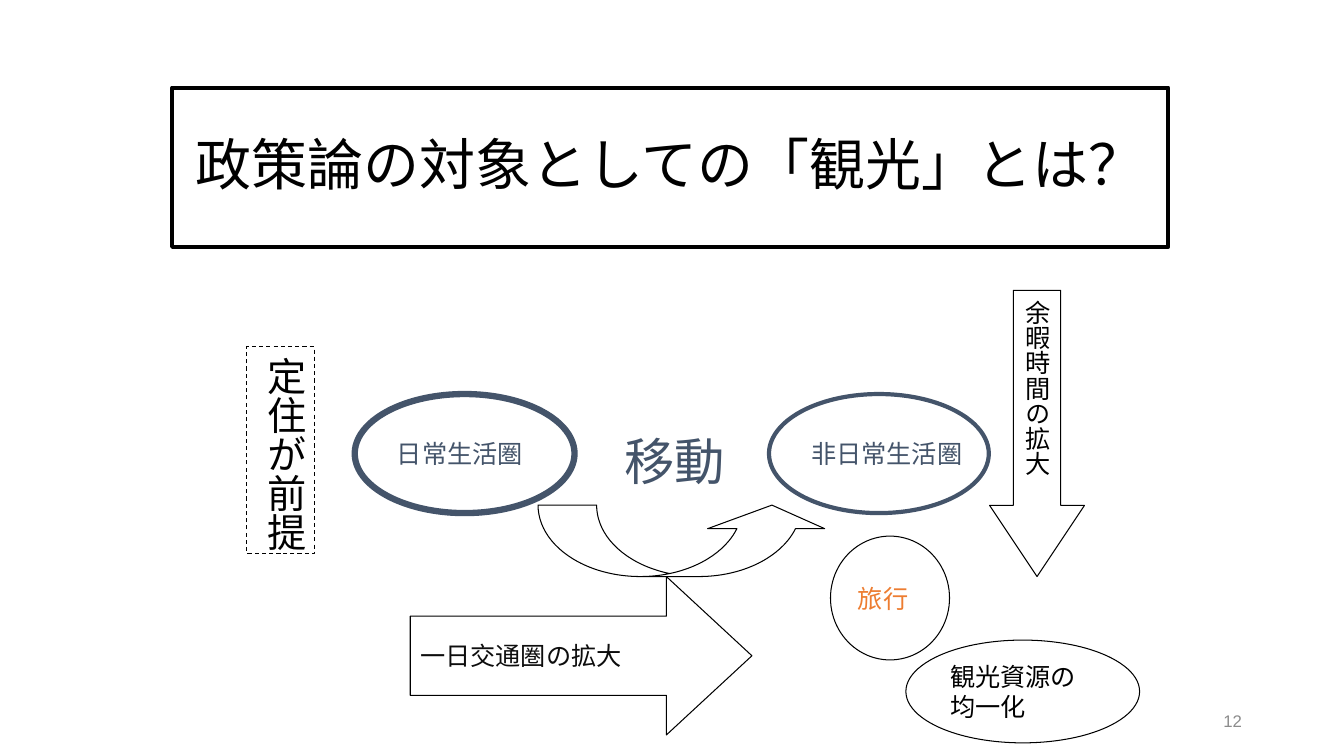
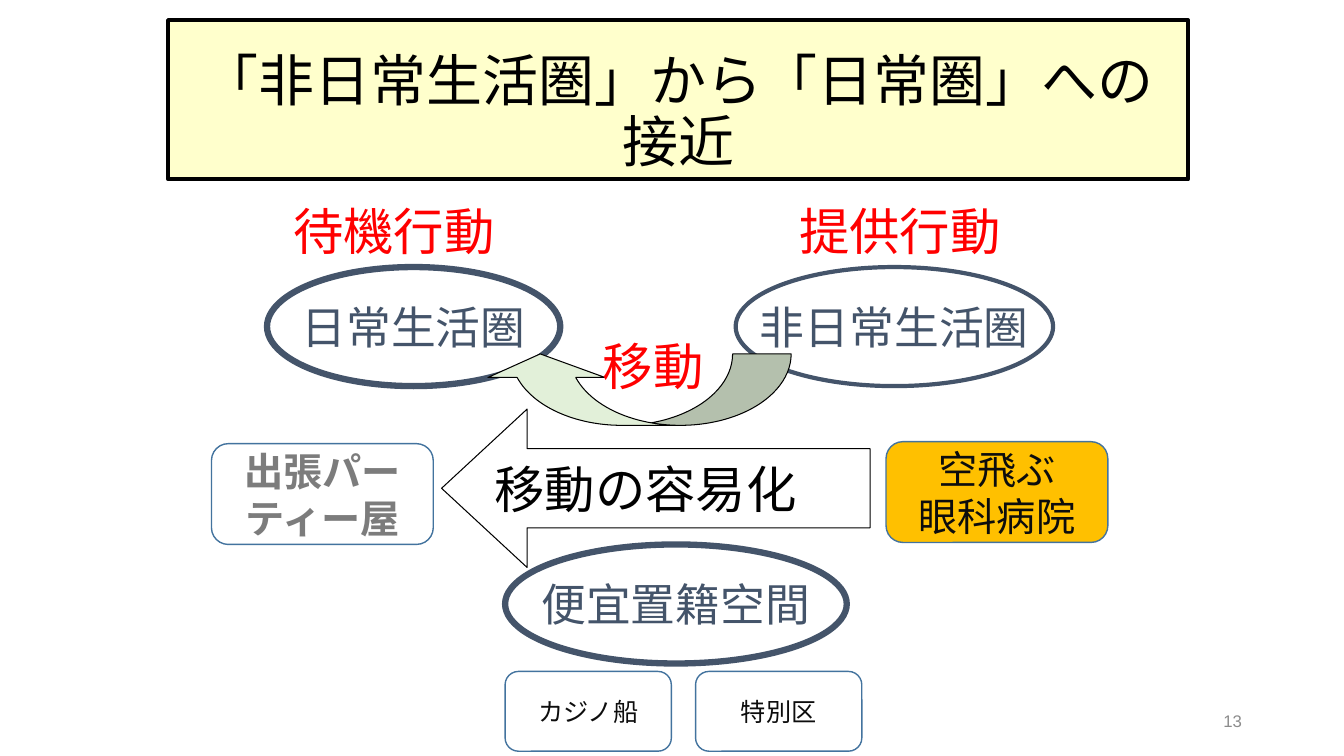
from pptx import Presentation
from pptx.dml.color import RGBColor
from pptx.enum.dml import MSO_LINE_DASH_STYLE as Dash
from pptx.enum.shapes import MSO_AUTO_SHAPE_TYPE as Kind
from pptx.enum.text import MSO_ANCHOR as Anchor, MSO_AUTO_SIZE as AutoSize, PP_ALIGN as Align
from pptx.util import Cm, Pt

# Shared look
BLACK, INK, WHITE = "000000", "0D0D0D", "FFFFFF"
SLATE, RED, ORANGE, GREY = "44546A", "FF0000", "ED7D31", "7C7C7C"
CREAM, GREEN, GOLD, BLUE = "FFFFCC", "E2F0D9", "FFC000", "43739E"
NUMBER_GREY = "8C8C8C"
BODY_FONT, NUMBER_FONT = "Calibri", "Arial"
THIN, MEDIUM, THICK = 0.75, 3, 4.5
SPHERE_HEIGHT = 3
BLOCK_ARROW = (0.5, 0.54)
CURVED_ARROW = (0.82, 1.64, 0.33)


def color(hex_text):
    return RGBColor.from_string(hex_text)


def set_all(target, values):
    for name, value in values.items():
        setattr(target, name, value)


def write(shape, text, size, text_color=BLACK, align=Align.LEFT, anchor=Anchor.MIDDLE,
          wrap=False, grow=False, vertical=False, bold=False, font=BODY_FONT, spacing=None):
    """Fill a shape with text, one paragraph per line."""
    frame = shape.text_frame
    frame.text = text
    set_all(frame, {
        "word_wrap": wrap,
        "vertical_anchor": anchor,
        "auto_size": AutoSize.SHAPE_TO_FIT_TEXT if grow else AutoSize.NONE,
    })
    if vertical:
        shape.element.txBody.bodyPr.set("vert", "eaVert")
    for paragraph in frame.paragraphs:
        set_all(paragraph, {"alignment": align, "line_spacing": spacing})
        set_all(paragraph.runs[0].font, {"name": font, "size": Pt(size), "bold": bold})
        paragraph.runs[0].font.color.rgb = color(text_color)


def add_outline(slide, kind, box, fill=None, line=BLACK, width=THIN, flip="", adjust=()):
    """Draw a preset shape; flip holds any of the letters H and V."""
    shape = slide.shapes.add_shape(kind, *map(Cm, box))
    shape.shadow.inherit = False
    if fill:
        shape.fill.solid()
        shape.fill.fore_color.rgb = color(fill)
    else:
        shape.fill.background()
    shape.line.color.rgb = color(line)
    shape.line.width = Pt(width)
    for index, value in enumerate(adjust):
        shape.adjustments[index] = value
    for axis in flip:
        shape.element.spPr.xfrm.set("flip" + axis, "1")
    return shape


def add_label(slide, box, text, size=36, text_color=RED, **style):
    label = slide.shapes.add_textbox(*map(Cm, box))
    write(label, text, size, text_color, **{"anchor": Anchor.TOP, "grow": True, **style})


def add_title(slide, box, text, fill, anchor):
    title = add_outline(slide, Kind.RECTANGLE, box, fill, width=MEDIUM)
    write(title, text, 40, align=Align.CENTER, anchor=anchor, wrap=True, spacing=0.9)


def add_sphere(slide, left, top, width, text, size, line_width=THICK, align=Align.CENTER):
    """Ellipse for a sphere of life."""
    sphere = add_outline(slide, Kind.OVAL, (left, top, width, SPHERE_HEIGHT),
                         line=SLATE, width=line_width)
    write(sphere, text, size, SLATE, align)


def add_example(slide, box, text, size, text_color=INK, fill=None, bold=False):
    card = add_outline(slide, Kind.ROUNDED_RECTANGLE, box, fill, BLUE, 1)
    write(card, text, size, text_color, Align.CENTER, wrap=True, bold=bold)


def add_slide(presentation, number):
    slide = presentation.slides.add_slide(presentation.slide_layouts[6])
    add_label(slide, (23.93, 17.65, 7.62, 1.02), str(number), 12, NUMBER_GREY, font=NUMBER_FONT,
              align=Align.RIGHT, anchor=Anchor.MIDDLE, wrap=True, grow=False)
    return slide


def build_tourism(presentation):
    slide = add_slide(presentation, 12)
    add_title(slide, (4.34, 2.21, 25.1, 4.01), "政策論の対象としての「観光」とは？",
              WHITE, Anchor.MIDDLE)

    # Movement between the spheres
    add_sphere(slide, 8.94, 9.93, 5.54, "日常生活圏", 18, align=Align.LEFT)
    add_sphere(slide, 19.38, 9.93, 5.54, "非日常生活圏", 18, MEDIUM, Align.LEFT)
    add_outline(slide, Kind.CURVED_DOWN_ARROW, (13.56, 12.73, 7.37, 1.8),
                flip="V", adjust=CURVED_ARROW)
    add_label(slide, (15.49, 10.72, 3.05, 1.78), "移動", text_color=SLATE)

    # Premise
    premise = add_outline(slide, Kind.RECTANGLE, (6.22, 8.74, 1.7, 5.21))
    premise.line.dash_style = Dash.DASH
    write(premise, "定住が前提", 28, anchor=Anchor.TOP, grow=True, vertical=True)

    # Driving forces
    transport = add_outline(slide, Kind.RIGHT_ARROW, (10.34, 14.53, 8.61, 3.99), WHITE,
                            adjust=BLOCK_ARROW)
    write(transport, "一日交通圏の拡大", 18, INK)
    travel = add_outline(slide, Kind.OVAL, (20.93, 13.51, 3, 3.12), WHITE)
    write(travel, "旅行", 18, ORANGE)
    leisure = add_outline(slide, Kind.DOWN_ARROW, (24.94, 7.32, 2.39, 7.21),
                          adjust=(0.5, 0.75))
    write(leisure, "余暇時間の拡大", 18, vertical=True)
    resources = add_outline(slide, Kind.OVAL, (22.83, 16.13, 5.89, 2.59), WHITE)
    write(resources, "観光資源の\n均一化", 18)


def build_approach(presentation):
    slide = add_slide(presentation, 13)
    add_title(slide, (4.24, 0.51, 25.7, 4.01), "「非日常生活圏」から「日常圏」への接近",
              CREAM, Anchor.BOTTOM)

    # Movement between the spheres
    add_sphere(slide, 6.73, 6.73, 7.39, "日常生活圏", 32)
    add_sphere(slide, 18.54, 6.73, 8, "非日常生活圏", 32, MEDIUM)
    add_outline(slide, Kind.CURVED_DOWN_ARROW, (12.14, 8.92, 7.8, 1.8), GREEN,
                flip="HV", adjust=CURVED_ARROW)
    add_label(slide, (14.94, 8.33, 3.05, 1.78), "移動")
    ease = add_outline(slide, Kind.RIGHT_ARROW, (11.13, 10.31, 10.8, 3.99), WHITE,
                       flip="H", adjust=BLOCK_ARROW)
    write(ease, "移動の容易化", 36)
    for left, text in ((19.89, "提供行動"), (7.14, "待機行動")):
        add_label(slide, (left, 4.93, 5.64, 1.8), text)
    add_sphere(slide, 12.73, 13.72, 8.61, "便宜置籍空間", 32)

    # Examples
    add_example(slide, (22.33, 11.13, 5.59, 2.54), "空飛ぶ\n眼科病院", 28, fill=GOLD)
    add_example(slide, (5.33, 11.18, 5.59, 2.54), "出張パーティー屋", 28, GREY, bold=True)
    for left, text in ((12.73, "カジノ船"), (17.53, "特別区")):
        add_example(slide, (left, 16.92, 4.19, 2.01), text, 18)


def main():
    presentation = Presentation()
    set_all(presentation, {"slide_width": Cm(33.87), "slide_height": Cm(19.05)})
    build_tourism(presentation)
    build_approach(presentation)
    presentation.save("out.pptx")


if __name__ == "__main__":
    main()
